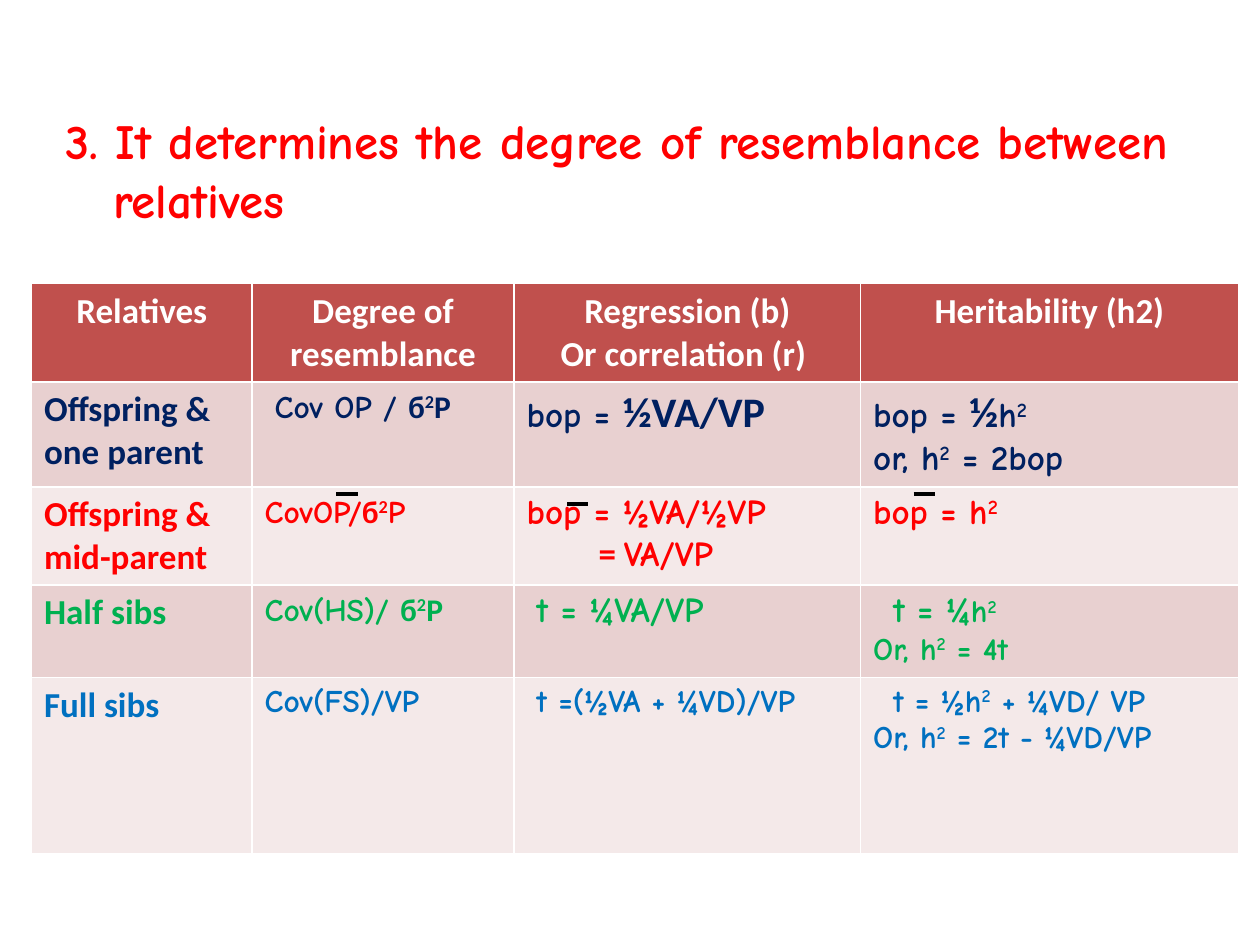
from dataclasses import dataclass

from lxml import etree
from pptx import Presentation
from pptx.dml.color import RGBColor
from pptx.enum.shapes import MSO_CONNECTOR
from pptx.enum.text import PP_ALIGN
from pptx.oxml.ns import qn
from pptx.util import Inches, Pt

CENTER = PP_ALIGN.CENTER
LEFT = PP_ALIGN.LEFT
STRAIGHT = MSO_CONNECTOR.STRAIGHT


@dataclass(frozen=True)
class Theme:
    plain: str = "Calibri"
    hand: str = "Comic Neue"
    title: int = 28
    large: int = 24
    medium: int = 20
    small: int = 18
    white: str = "FFFFFF"
    black: str = "000000"
    header: str = "C0504D"
    bands: tuple = ("E8D0D0", "F4E9E9")
    navy: str = "002060"
    red: str = "FF0000"
    green: str = "00B050"
    blue: str = "0070C0"


THEME = Theme()


@dataclass(frozen=True)
class Piece:
    text: str
    size: int = THEME.small
    font: str = THEME.hand
    raised: bool = False


@dataclass(frozen=True)
class Line:
    pieces: tuple
    indent: float = 0


def hand(text, size=THEME.small):
    return Piece(text, size)


def plain(text, size=THEME.medium):
    return Piece(text, size, THEME.plain)


def squared(size=THEME.small, font=THEME.hand):
    return Piece("2", size, font, True)


def line(*pieces, indent=0):
    return Line(pieces, indent)


def phenotypic_variance(font):
    """The symbol б²P, with the last letter in the given font."""
    return (plain("б", THEME.small), squared(font=THEME.plain), Piece("P", font=font))


MEDIUM, LARGE = THEME.medium, THEME.large

HEADINGS = [
    ["Relatives"],
    ["Degree of resemblance"],
    ["Regression (b)", "Or correlation (r) "],
    ["Heritability (h2)"],
]

# Each row: text colour, then the lines of its four cells
RELATIVES = [
    (THEME.navy, [
        [line(plain("Offspring & one parent"))],
        [line(hand("Cov OP / "), *phenotypic_variance(THEME.plain), indent=0.08)],
        [line(hand("bop = ", MEDIUM), plain("½VA/VP", LARGE))],
        [line(hand("bop = ", MEDIUM), plain("½", LARGE), hand("h", MEDIUM), squared(MEDIUM)),
         line(hand("or, h", MEDIUM), squared(MEDIUM), hand(" = 2bop", MEDIUM))],
    ]),
    (THEME.red, [
        [line(plain("Offspring & mid-parent"))],
        [line(hand("CovOP/"), *phenotypic_variance(THEME.hand))],
        [line(hand("bop = ½VA/½VP", MEDIUM)),
         line(plain("= "), hand("VA/VP", MEDIUM), indent=0.57)],
        [line(hand("bop = h", MEDIUM), squared(MEDIUM))],
    ]),
    (THEME.green, [
        [line(plain("Half sibs"))],
        [line(hand("Cov(HS)/ "), *phenotypic_variance(THEME.plain))],
        [line(hand("t = ¼VA/VP", MEDIUM), indent=0.08)],
        [line(hand("t = ¼", MEDIUM), hand("h"), squared(), indent=0.16),
         line(hand("Or, h"), squared(), hand(" = 4t"))],
    ]),
    (THEME.blue, [
        [line(plain("Full sibs"))],
        [line(hand("Cov(FS)/VP"))],
        [line(hand("t =(½VA + ¼VD)/VP"), indent=0.08)],
        [line(hand("t = ½h"), squared(), hand(" + ¼VD/ VP"), indent=0.16),
         line(hand("Or, h"), squared(), hand(" = 2t - ¼VD/VP"))],
    ]),
]

COLUMN_WIDTHS = [1.75, 2.08, 2.75, 3]
ROW_HEIGHTS = [0.78, 0.83, 0.78, 0.71, 1.4]
MEAN_BARS = [(2.42, 1.67), (7, 1.67), (4.25, 1.75)]
BAR_LENGTH = 0.17


def add_line(text_frame, index, content, color, align=LEFT, hanging=0):
    paragraph = text_frame.paragraphs[0] if index == 0 else text_frame.add_paragraph()
    paragraph.alignment = align
    properties = paragraph._p.get_or_add_pPr()
    properties.set("marL", str(Inches(content.indent)))
    properties.set("indent", str(Inches(-hanging)))
    for piece in content.pieces:
        run = paragraph.add_run()
        run.text = piece.text
        run.font.name = piece.font
        run.font.size = Pt(piece.size)
        run.font.bold = True
        run.font.color.rgb = RGBColor.from_string(color)
        if piece.raised:
            run.font._element.set("baseline", "30000")


def add_title(slide, left, top, width, height):
    shape = slide.shapes.add_textbox(Inches(left), Inches(top), Inches(width), Inches(height))
    shape.text_frame.word_wrap = True
    text = "3. It determines the degree of resemblance between relatives"
    add_line(shape.text_frame, 0, line(hand(text, THEME.title), indent=0.38),
             THEME.red, hanging=0.38)


def add_borders(cell):
    properties = cell._tc.get_or_add_tcPr()
    for index, side in enumerate(("a:lnL", "a:lnR", "a:lnT", "a:lnB")):
        border = etree.Element(qn(side), w=str(Pt(1)))
        fill = etree.SubElement(border, qn("a:solidFill"))
        etree.SubElement(fill, qn("a:srgbClr"), val=THEME.white)
        properties.insert(index, border)


def fill_cell(cell, lines, text_color, background, align=LEFT):
    cell.fill.solid()
    cell.fill.fore_color.rgb = RGBColor.from_string(background)
    add_borders(cell)
    for index, content in enumerate(lines):
        add_line(cell.text_frame, index, content, text_color, align)


def add_relatives_table(slide, left, top, width, height):
    frame = slide.shapes.add_table(len(ROW_HEIGHTS), len(COLUMN_WIDTHS), Inches(left),
                                   Inches(top), Inches(width), Inches(height))
    table = frame.table
    for column, column_width in zip(table.columns, COLUMN_WIDTHS):
        column.width = Inches(column_width)
    for row, row_height in zip(table.rows, ROW_HEIGHTS):
        row.height = Inches(row_height)
    for column, texts in enumerate(HEADINGS):
        lines = [line(plain(text)) for text in texts]
        fill_cell(table.cell(0, column), lines, THEME.white, THEME.header, CENTER)
    for row, (color, cells) in enumerate(RELATIVES):
        for column, lines in enumerate(cells):
            fill_cell(table.cell(row + 1, column), lines, color, THEME.bands[row % 2])


def add_mean_bars(slide, left, top):
    """Draw the bars that mark a mid-parent mean, offset from the table corner."""
    for x, y in MEAN_BARS:
        start, level = Inches(left + x), Inches(top + y)
        bar = slide.shapes.add_connector(STRAIGHT, start, level,
                                         start + Inches(BAR_LENGTH), level)
        bar.line.color.rgb = RGBColor.from_string(THEME.black)
        bar.line.width = Pt(2.25)
        etree.SubElement(bar._element.spPr, qn("a:effectLst"))


def main():
    presentation = Presentation()
    presentation.slide_width = Inches(10)
    presentation.slide_height = Inches(7.5)
    slide = presentation.slides.add_slide(presentation.slide_layouts[6])
    add_title(slide, 0.42, 0.83, 9, 5.7)
    add_relatives_table(slide, 0.25, 2.25, sum(COLUMN_WIDTHS), sum(ROW_HEIGHTS))
    add_mean_bars(slide, 0.25, 2.25)
    presentation.save("out.pptx")


if __name__ == "__main__":
    main()
